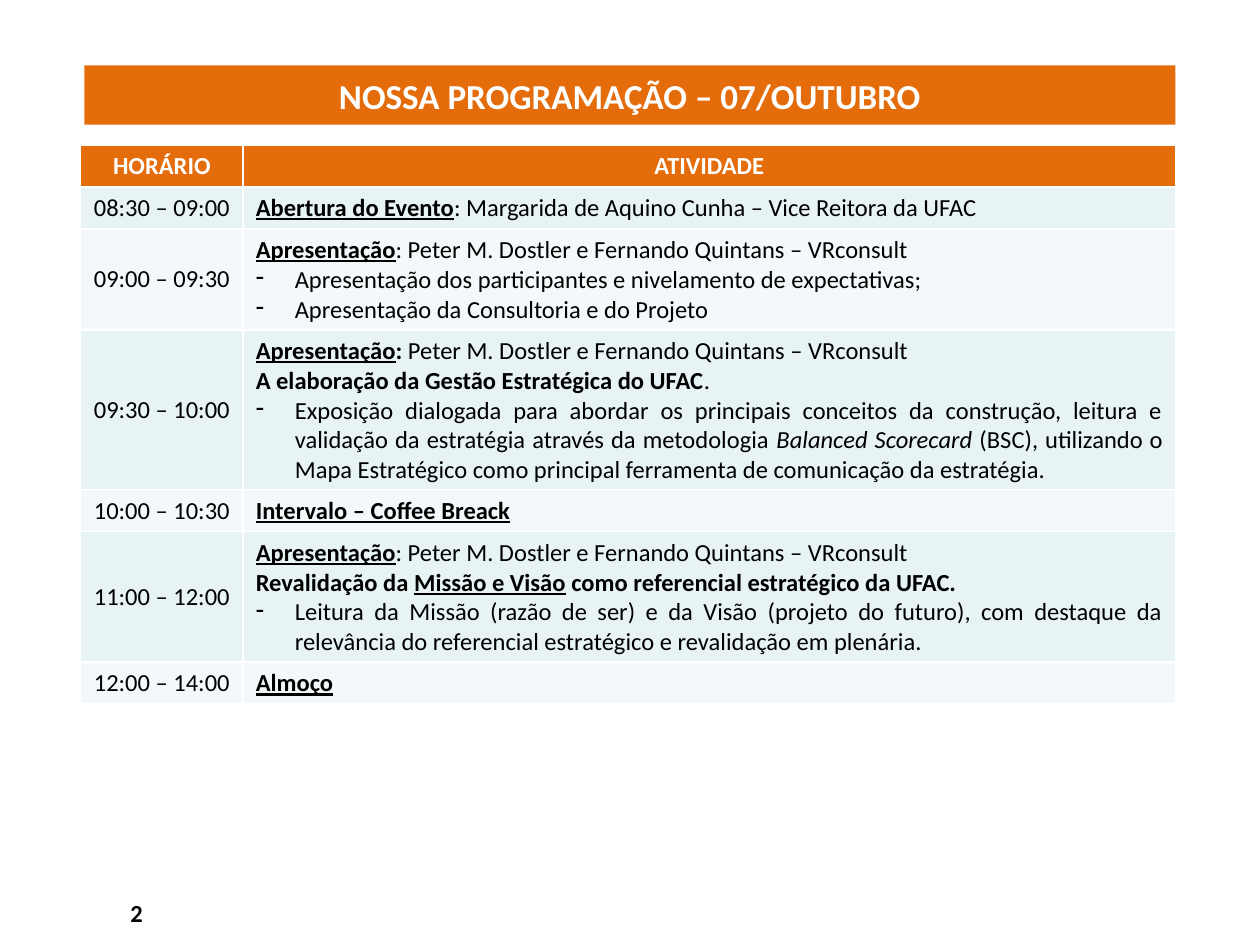
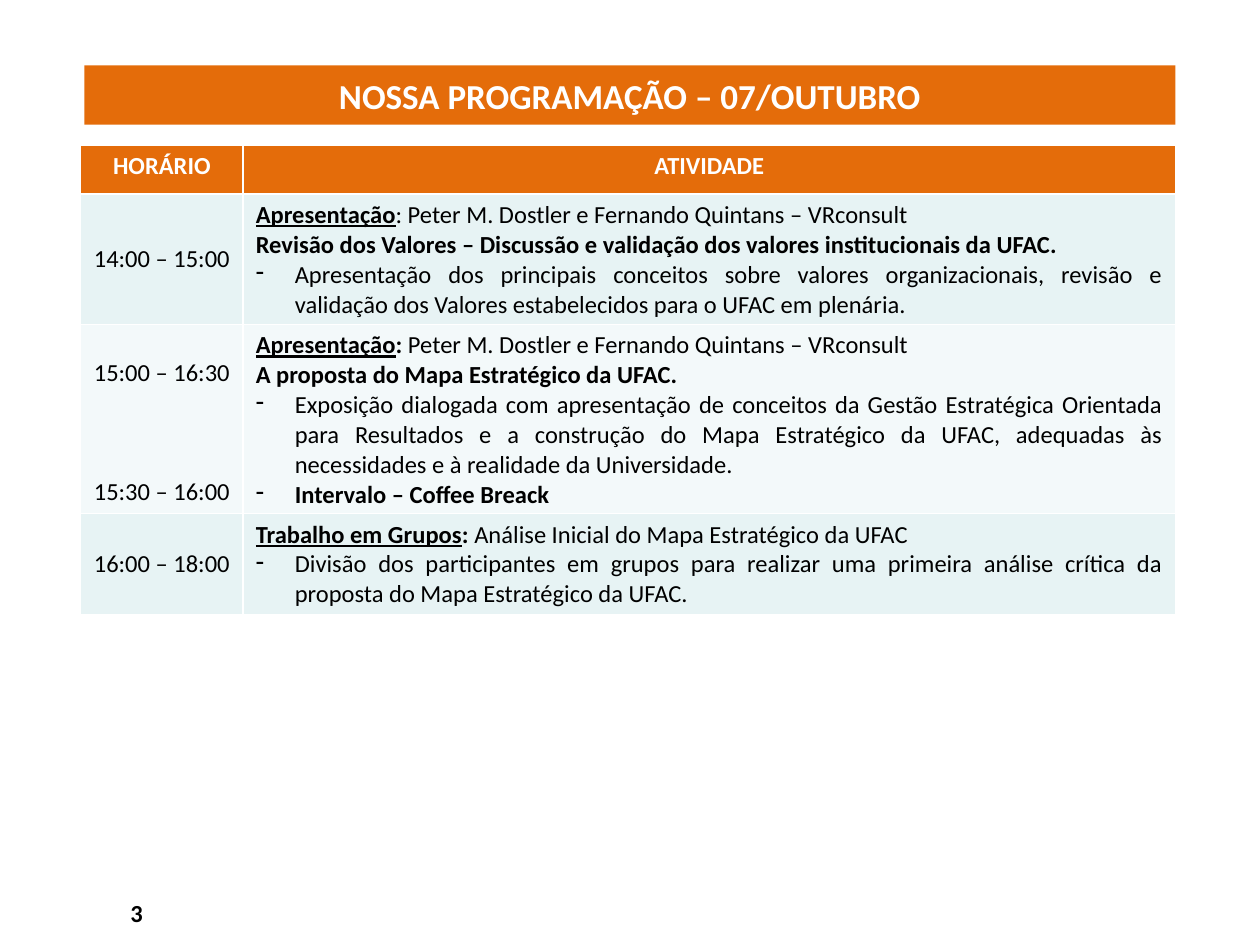
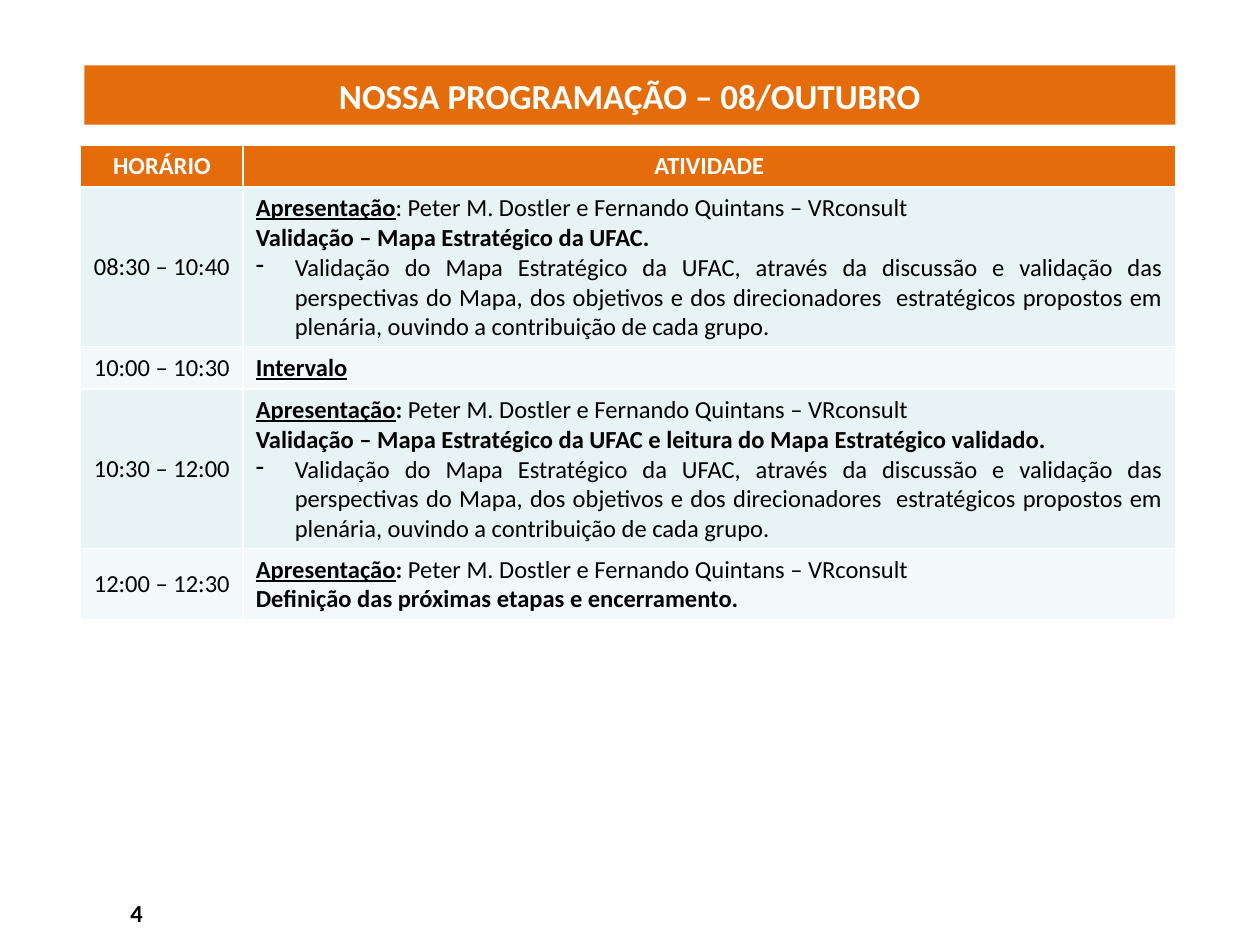
import pptx
import pptx.dml.color
import pptx.enum.shapes
import pptx.enum.text
import pptx.oxml.ns
import pptx.util
from lxml import etree

Inches, Pt = pptx.util.Inches, pptx.util.Pt
ALIGN, ANCHOR = pptx.enum.text.PP_ALIGN, pptx.enum.text.MSO_ANCHOR
HUES = {"band": "E46C0A", "odd": "E7F3F4", "even": "F3F9FA",
        "light": "FFFFFF", "dark": "000000"}
FONT = "Calibri"
COLS = [1.29, 7.4]
LINE, PAD = 0.23, 0.1  # row height: text lines plus cell margins

# A paragraph is a list of (style, text) runs.
# Styles: b bold, u underlined, i italic, - dash bullet.
who = "Peter M. Dostler e Fernando Quintans – VRconsult"
talk = [("bu", "Apresentação"), ("", ": " + who)]
talk_bold = [("bu", "Apresentação"), ("b", ":"), ("", " " + who)]
check = [("-", "Validação do Mapa Estratégico da UFAC, através da discussão e "
               "validação das perspectivas do Mapa, dos objetivos e dos "
               "direcionadores  estratégicos propostos em plenária, ouvindo a "
               "contribuição de cada grupo.")]

# Each day part: title, header height, rows of (times, text lines, paragraphs).
days = [
    ("NOSSA PROGRAMAÇÃO – 07/OUTUBRO", 0.33, [
        (["08:30 – 09:00"], 1, [
            [("bu", "Abertura do Evento"),
             ("", ": Margarida de Aquino Cunha – Vice Reitora da UFAC")]]),
        (["09:00 – 09:30"], 3, [
            talk,
            [("-", "Apresentação dos participantes e nivelamento de expectativas;")],
            [("-", "Apresentação da Consultoria e do Projeto")]]),
        (["09:30 – 10:00"], 5, [
            talk_bold,
            [("b", "A elaboração da Gestão Estratégica do UFAC"), ("", ".")],
            [("-", "Exposição dialogada para abordar os principais conceitos da "
                   "construção, leitura e validação da estratégia através da "
                   "metodologia "),
             ("i", "Balanced Scorecard"),
             ("", " (BSC), utilizando o Mapa Estratégico como principal "
                  "ferramenta de comunicação da estratégia.")]]),
        (["10:00 – 10:30"], 1, [[("bu", "Intervalo – Coffee Breack")]]),
        (["11:00 – 12:00"], 4, [
            talk,
            [("b", "Revalidação da "), ("bu", "Missão e Visão"),
             ("b", " como referencial estratégico da UFAC.")],
            [("-", "Leitura da Missão (razão de ser) e da Visão (projeto do "
                   "futuro), com destaque da relevância do referencial "
                   "estratégico e revalidação em plenária.")]]),
        (["12:00 – 14:00"], 1, [[("bu", "Almoço")]]),
    ]),
    ("NOSSA PROGRAMAÇÃO – 07/OUTUBRO", 0.39, [
        (["14:00 – 15:00"], 4, [
            talk,
            [("b", "Revisão dos Valores – Discussão e validação dos valores "
                   "institucionais da UFAC.")],
            [("-", "Apresentação dos principais conceitos sobre valores "
                   "organizacionais, revisão e validação dos Valores "
                   "estabelecidos para o UFAC em plenária.")]]),
        (["15:00 – 16:30", "15:30 – 16:00"], 6, [
            talk_bold,
            [("b", "A proposta do Mapa Estratégico da UFAC.")],
            [("-", "Exposição dialogada com apresentação de conceitos da Gestão "
                   "Estratégica Orientada para Resultados e a construção do Mapa "
                   "Estratégico da UFAC, adequadas às necessidades e à realidade "
                   "da Universidade.")],
            [("-b", "Intervalo – Coffee Breack")]]),
        (["16:00 – 18:00"], 3, [
            [("bu", "Trabalho em Grupos"), ("b", ": "),
             ("", "Análise Inicial do Mapa Estratégico da UFAC")],
            [("-", "Divisão dos participantes em grupos para realizar uma "
                   "primeira análise crítica da proposta do Mapa Estratégico "
                   "da UFAC.")]]),
    ]),
    ("NOSSA PROGRAMAÇÃO – 08/OUTUBRO", 0.33, [
        (["08:30 – 10:40"], 5, [
            talk, [("b", "Validação – Mapa Estratégico da UFAC.")], check]),
        (["10:00 – 10:30"], 1, [[("bu", "Intervalo")]]),
        (["10:30 – 12:00"], 5, [
            talk_bold,
            [("b", "Validação – Mapa Estratégico da UFAC e leitura do Mapa "
                   "Estratégico validado.")],
            check]),
        (["12:00 – 12:30"], 2, [
            talk_bold,
            [("b", "Definição das próximas etapas e encerramento.")]]),
    ]),
]


def color(name):
    return pptx.dml.color.RGBColor.from_string(HUES[name])


def write(frame, paras, align, hue="dark", size=14):
    """Fill a text frame with paragraphs of styled runs."""
    for i, runs in enumerate(paras):
        para = frame.add_paragraph() if i else frame.paragraphs[0]
        para.alignment = align
        if "-" in runs[0][0]:
            props = para._p.get_or_add_pPr()
            props.set("marL", str(Inches(0.31)))
            props.set("indent", str(-Inches(0.31)))
            etree.SubElement(props, pptx.oxml.ns.qn("a:buChar"), char="-")
        para.font.name = FONT
        para.font.size = Pt(size)
        para.font.color.rgb = color(hue)
        for style, text in runs:
            run = para.add_run()
            run.text = text
            font = para.font if len(runs) == 1 else run.font
            font.bold = "b" in style
            font.underline = "u" in style
            font.italic = "i" in style


deck = pptx.Presentation()
deck.slide_width, deck.slide_height = Inches(10), Inches(7.5)

for page, (title, head, rows) in enumerate(days, 2):
    slide = deck.slides.add_slide(deck.slide_layouts[6])

    box = slide.shapes.add_textbox(Inches(0), Inches(6.98), Inches(2.17), Inches(0.52))
    box.text_frame.word_wrap = True
    box.text_frame.vertical_anchor = ANCHOR.MIDDLE
    write(box.text_frame, [[("b", str(page))]], ALIGN.CENTER)

    band = slide.shapes.add_shape(pptx.enum.shapes.MSO_SHAPE.RECTANGLE,
                                  Inches(0.67), Inches(0.52), Inches(8.66), Inches(0.47))
    band.shadow.inherit = False
    band.fill.solid()
    band.fill.fore_color.rgb = color("band")
    band.line.fill.background()
    band.text_frame.vertical_anchor = ANCHOR.MIDDLE
    write(band.text_frame, [[("b", title)]], ALIGN.CENTER, "light", 20)

    highs = [head] + [PAD + LINE * lines for _, lines, _ in rows]
    table = slide.shapes.add_table(len(highs), len(COLS), Inches(0.64), Inches(1.15),
                                   Inches(sum(COLS)), Inches(sum(highs))).table
    for col, width in zip(table.columns, COLS):
        col.width = Inches(width)
    for row, high in zip(table.rows, highs):
        row.height = Inches(high)

    for cell, label in zip(table.rows[0].cells, ["HORÁRIO", "ATIVIDADE"]):
        cell.fill.solid()
        cell.fill.fore_color.rgb = color("band")
        write(cell.text_frame, [[("b", label)]], ALIGN.CENTER, "light")

    for n, (times, lines, paras) in enumerate(rows, 1):
        time, task = table.rows[n].cells
        for cell in (time, task):
            cell.fill.solid()
            cell.fill.fore_color.rgb = color("odd" if n % 2 else "even")
            cell.vertical_anchor = ANCHOR.MIDDLE
        write(time.text_frame, [[("", text)] for text in times], ALIGN.CENTER)
        write(task.text_frame, paras, ALIGN.JUSTIFY)
        if len(times) > 1:  # the last time sits beside the last line
            time.vertical_anchor = ANCHOR.BOTTOM
            time.text_frame.paragraphs[-1].space_before = Pt(51)

deck.save("out.pptx")
